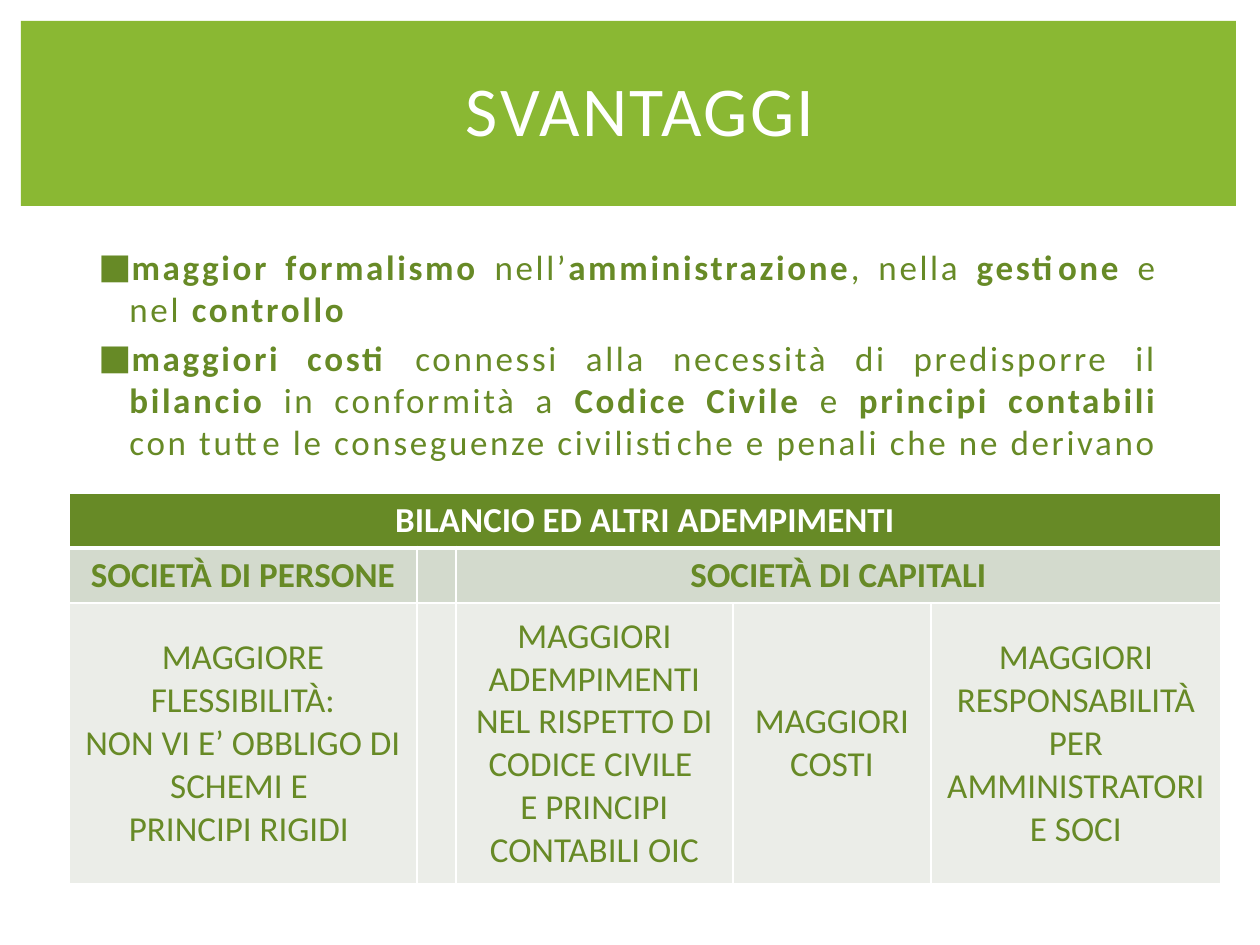
from lxml import etree
from pptx import Presentation
from pptx.dml.color import RGBColor
from pptx.enum import shapes, text
from pptx.oxml.ns import qn
from pptx.util import Emu, Pt

PX = 914400 // 126
THEME = dict(font="Calibri", band="8AB833", dark="678A26", white="FFFFFF",
             subhead="D3DACD", cell="EBEDE8", title=40, body=20)


def write(frame, paragraphs, color, size=THEME["body"], align="CENTER",
          bold=False, spacing=0, before=0, bullet=False):
    """Fill a frame; in each paragraph, parts between * marks are bold."""
    frame.word_wrap = True
    for i, line in enumerate(paragraphs):
        par = frame.paragraphs[0] if i == 0 else frame.add_paragraph()
        par.alignment = getattr(text.PP_ALIGN, align)
        par.space_before = Pt(before)
        if bullet:
            props = par._p.get_or_add_pPr()
            props.set("marL", str(38 * PX))
            props.set("indent", str(-31 * PX))
            tint = etree.SubElement(props, qn("a:buClr"))
            etree.SubElement(tint, qn("a:srgbClr"), val=color)
            etree.SubElement(props, qn("a:buFont"), typeface=THEME["font"])
            etree.SubElement(props, qn("a:buChar"), char="■")
        for j, part in enumerate(line.split("*")):
            if not part:
                continue
            run = par.add_run()
            run.text = part
            run.font.name = THEME["font"]
            run.font.size = Pt(size)
            run.font.bold = bold or j % 2 == 1
            run.font.color.rgb = RGBColor.from_string(color)
            if spacing:
                run._r.get_or_add_rPr().set("spc", str(spacing))


deck = Presentation()
deck.slide_width, deck.slide_height = Emu(1260 * PX), Emu(945 * PX)
slide = deck.slides.add_slide(deck.slide_layouts[6])

# Title band
band = slide.shapes.add_shape(shapes.MSO_SHAPE.RECTANGLE,
                              21 * PX, 21 * PX, 1215 * PX, 185 * PX)
band.shadow.inherit = False
band.fill.solid()
band.fill.fore_color.rgb = RGBColor.from_string(THEME["band"])
band.line.fill.background()

title = slide.shapes.add_textbox(79 * PX, 60 * PX, 1123 * PX, 120 * PX)
write(title.text_frame, ["SVANTAGGI"], THEME["white"], size=THEME["title"],
      spacing=150)

# Drawbacks
drawbacks = slide.shapes.add_textbox(79 * PX, 239 * PX, 1091 * PX, 307 * PX)
write(drawbacks.text_frame, [
    "*maggior formalismo *nell’*amministrazione*, nella *gestione* e nel *controllo*",
    "*maggiori costi *connessi alla necessità di predisporre il *bilancio* in "
    "conformità a *Codice Civile* e *principi contabili *con tutte le "
    "conseguenze civilistiche e penali che ne derivano",
], THEME["dark"], align="JUSTIFY", spacing=150, before=4, bullet=True)

# Comparison table: (paragraphs, columns spanned) per cell
widths = [348, 39, 277, 198, 290]
heights = [55, 55, 281]
rows = [
    [(["BILANCIO ED ALTRI ADEMPIMENTI"], 5)],
    [(["SOCIETÀ DI PERSONE"], 1), ([], 1), (["SOCIETÀ DI CAPITALI"], 3)],
    [(["MAGGIORE FLESSIBILITÀ:", "NON VI E’ OBBLIGO DI SCHEMI E ",
       "PRINCIPI RIGIDI "], 1),
     ([], 1),
     (["MAGGIORI ADEMPIMENTI NEL RISPETTO DI CODICE CIVILE ",
       "E PRINCIPI CONTABILI OIC"], 1),
     (["MAGGIORI COSTI"], 1),
     (["MAGGIORI RESPONSABILITÀ", "PER AMMINISTRATORI E SOCI"], 1)],
]
fills = [THEME["dark"], THEME["subhead"], THEME["cell"]]
inks = [THEME["white"], THEME["dark"], THEME["dark"]]

table = slide.shapes.add_table(3, 5, 69 * PX, 493 * PX, sum(widths) * PX,
                               sum(heights) * PX).table
for column, width in zip(table.columns, widths):
    column.width = Emu(width * PX)

for r, row in enumerate(rows):
    table.rows[r].height = Emu(heights[r] * PX)
    c = 0
    for lines, span in row:
        cell = table.cell(r, c)
        if span > 1:
            cell.merge(table.cell(r, c + span - 1))
        cell.vertical_anchor = text.MSO_ANCHOR.MIDDLE
        write(cell.text_frame, lines, inks[r], bold=r < 2)
        c += span
    for c in range(len(widths)):
        cell = table.cell(r, c)
        props = cell._tc.get_or_add_tcPr()
        for side in "LRTB":
            thick = (r, side) in ((0, "B"), (1, "T"))
            edge = etree.SubElement(props, qn(f"a:ln{side}"),
                                    w=str(Pt(3 if thick else 1)))
            paint = etree.SubElement(edge, qn("a:solidFill"))
            etree.SubElement(paint, qn("a:srgbClr"), val=THEME["white"])
        cell.fill.solid()
        cell.fill.fore_color.rgb = RGBColor.from_string(fills[r])

deck.save("out.pptx")
